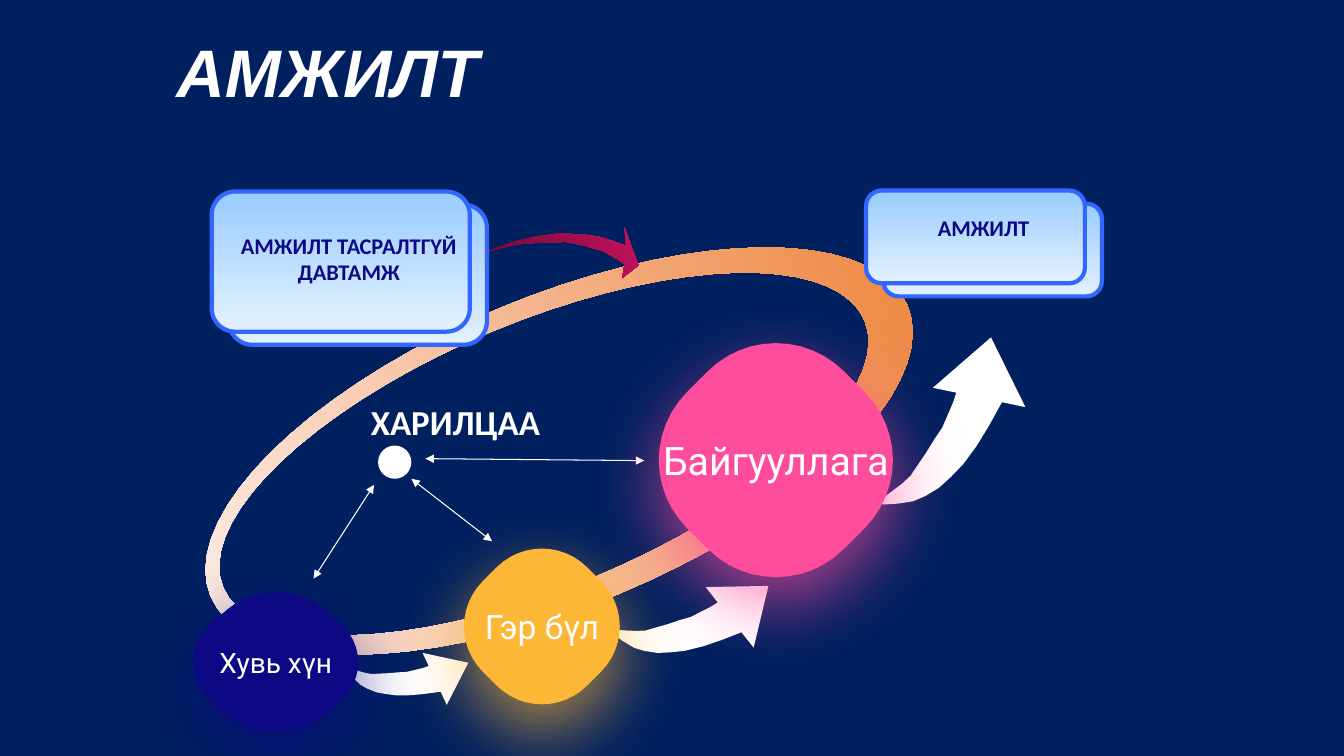
from math import cos, pi, sin

from lxml.etree import SubElement
from pptx import Presentation
from pptx.dml.color import RGBColor
from pptx.enum.shapes import MSO_CONNECTOR, MSO_SHAPE
from pptx.enum.text import MSO_ANCHOR, MSO_AUTO_SIZE, PP_ALIGN
from pptx.oxml.ns import qn
from pptx.util import Inches, Pt

# Grid: cells of one inch
COLS, ROWS = 13.33, 7.5
CELL = Inches(1)

NAVY = RGBColor(0x00, 0x20, 0x60)
WHITE = RGBColor(0xFF, 0xFF, 0xFF)
INK = RGBColor(0x0D, 0x08, 0x84)
AMBER = RGBColor(0xFC, 0xB7, 0x36)
PINK = RGBColor(0xFF, 0x4D, 0x9E)
CREAM = RGBColor(0xFD, 0xF6, 0xF5)
ORANGE = RGBColor(0xED, 0x7D, 0x31)
RUBY = RGBColor(0xD1, 0x13, 0x64)
WINE = RGBColor(0x61, 0x09, 0x2E)
SKY = RGBColor(0x99, 0xCC, 0xFF)
ICE = RGBColor(0xE3, 0xF1, 0xFF)
BLUE = RGBColor(0x33, 0x66, 0xFF)

# Outlines as shares of their own box
SWOOSH = [
    (0, 0), (0, .11), (.02, .21), (.05, .32), (.09, .4), (.15, .49), (.22, .56),
    (.3, .63), (.41, .7), (.53, .76), (.67, .82), (.67, 1), (1, .64), (.67, .29),
    (.67, .47), (.61, .46), (.54, .44), (.47, .42), (.4, .38), (.32, .34),
    (.25, .3), (.18, .26), (.13, .21), (.08, .15), (.04, .1), (.01, .05)]
HOOK = [
    (0, 1), (.03, .8), (.09, .63), (.17, .48), (.3, .32), (.43, .2), (.55, .12),
    (.67, .05), (.46, 0), (.95, .03), (1, .18), (.86, .12), (.75, .16),
    (.61, .22), (.46, .32), (.31, .44), (.17, .63), (.07, .79)]


def cells(*spans):
    return [round(span * CELL) for span in spans]


def oval(mid, half, steps=72):
    """Points round an ellipse, as shares of a box."""
    turns = [2 * pi * step / steps for step in range(steps)]
    return [(mid[0] + half[0] * cos(t), mid[1] + half[1] * sin(t)) for t in turns]


def blob(steps=12):
    """A rounded diamond: one curved corner, turned four times."""
    knots = [(.77, .85), (.62, 1), (.38, 1), (.23, .85)]
    side = []
    for step in range(steps + 1):
        t = step / steps
        parts = [(1 - t) ** 3, 3 * t * (1 - t) ** 2, 3 * t * t * (1 - t), t ** 3]
        side.append(tuple(sum(p * k[axis] for p, k in zip(parts, knots))
                          for axis in (0, 1)))
    points = []
    for _ in range(4):
        points += side
        side = [(1 - y, x) for x, y in side]
    return points


def paint(shape, fill, angle=0):
    """Fill with one colour, or with a pair as a gradient."""
    shape.shadow.inherit = False
    shape.line.fill.background()
    if isinstance(fill, RGBColor):
        shape.fill.solid()
        shape.fill.fore_color.rgb = fill
        return
    shape.fill.gradient()
    shape.fill.gradient_angle = angle
    for stop, color in zip(shape.fill.gradient_stops, fill):
        stop.color.rgb = color


def trace(slide, rings, box, fill, turn=0, angle=0):
    """Draw closed outlines within a box, then rotate it."""
    left, top, width, height = box
    paths = [[cells(left + x * width, top + y * height) for x, y in ring]
             for ring in rings]
    pen = slide.shapes.build_freeform(*paths[0][0])
    pen.add_line_segments(paths[0][1:], close=True)
    for path in paths[1:]:
        pen.move_to(*path[0])
        pen.add_line_segments(path[1:], close=True)
    shape = pen.convert_to_shape()
    shape.rotation = turn
    paint(shape, fill, angle)
    return shape


def write(frame, text, size, face, color, align=PP_ALIGN.LEFT, bold=False):
    frame.text = text
    para = frame.paragraphs[0]
    para.alignment = align
    font = para.font
    font.size, font.name, font.bold = Pt(size), face, bold
    font.color.rgb = color


def glow(shape, color):
    """Soft coloured shadow below a shape."""
    effects = shape._element.spPr.find(qn("a:effectLst"))
    shade = SubElement(effects, qn("a:outerShdw"), blurRad=str(Pt(53)),
                       dist=str(Pt(19)), dir="5400000", algn="t", rotWithShape="0")
    tone = SubElement(shade, qn("a:srgbClr"), val=str(color))
    SubElement(tone, qn("a:alpha"), val="67000")


def ball(slide, text, size, box, color):
    shape = trace(slide, [blob()], box, color)
    glow(shape, color)
    frame = shape.text_frame
    frame.word_wrap = False
    frame.margin_left = frame.margin_right = 0
    frame.vertical_anchor = MSO_ANCHOR.MIDDLE
    write(frame, text, size, "Roboto", WHITE, PP_ALIGN.CENTER)


def label(shapes, text, size, box, color, align, wrap):
    frame = shapes.add_textbox(*cells(*box)).text_frame
    frame.word_wrap = wrap
    frame.auto_size = MSO_AUTO_SIZE.SHAPE_TO_FIT_TEXT
    write(frame, text, size, "Calibri", color, align, True)


def card(slide, text, box, drop, tall):
    """Two stacked plates with a caption on the front one."""
    left, top, width, height = box
    group = slide.shapes.add_group_shape().shapes
    for right, down in ((.17, .13), (0, 0)):
        plate = group.add_shape(MSO_SHAPE.ROUNDED_RECTANGLE,
                                *cells(left + right, top + down, width, height))
        paint(plate, (SKY, ICE), 270)
        plate.line.color.rgb = BLUE
        plate.line.width = Pt(3)
    label(group, text, 16, (left + .08, top + drop, width, tall), INK,
          PP_ALIGN.CENTER, True)


def link(slide, *ends):
    """Thin line with an arrowhead at both ends."""
    line = slide.shapes.add_connector(MSO_CONNECTOR.STRAIGHT, *cells(*ends))
    line.line.color.rgb = WHITE
    line.line.width = Pt(.75)
    for end in ("headEnd", "tailEnd"):
        SubElement(line.line._get_or_add_ln(), qn("a:" + end), type="triangle")
    SubElement(line._element.spPr, qn("a:effectLst"))


def head(slide):
    title = slide.shapes.title
    title.left, title.top, title.width, title.height = cells(1.65, .44, 4.2, .62)
    frame = title.text_frame
    frame.vertical_anchor = MSO_ANCHOR.MIDDLE
    write(frame, "АМЖИЛТ", 48, "Arial", WHITE, bold=True)
    frame.paragraphs[0].font.italic = True
    frame.paragraphs[0].line_spacing = .9


def main():
    deck = Presentation()
    deck.slide_width, deck.slide_height = cells(COLS, ROWS)
    slide = deck.slides.add_slide(deck.slide_layouts[5])
    slide.background.fill.solid()
    slide.background.fill.fore_color.rgb = NAVY
    head(slide)

    # Hub and orbit
    hub = slide.shapes.add_shape(MSO_SHAPE.OVAL, *cells(3.75, 4.42, .33, .33))
    paint(hub, WHITE)
    orbit = [oval((.5, .5), (.5, .5)), oval((.48, .49), (.46, .43))[::-1]]
    trace(slide, orbit, (1.8, 2.94, 7.49, 3.07), (CREAM, ORANGE), 337.4)

    # Growth arrows
    for box, turn in (((8.54, 3.55, 1.84, 1.32), 281.8),
                      ((3.53, 6.31, 1.12, .8), 335.1),
                      ((6.19, 5.62, 1.5, 1.08), 321.6)):
        trace(slide, [SWOOSH], box, WHITE, turn)

    # Cards and the arrow between them
    card(slide, "АМЖИЛТ", (8.59, 1.89, 2.17, .92), .19, .37)
    trace(slide, [HOOK], (5.2, 1.91, .82, 1.33), (RUBY, WINE), 64.1, 270)
    card(slide, "АМЖИЛТ ТАСРАЛТГҮЙ ДАВТАМЖ", (2.1, 1.9, 2.56, 1.39), .35, .64)

    # Links from the hub
    label(slide.shapes, "ХАРИЛЦАА", 25, (3.58, 3.92, 1.9, .52), WHITE,
          PP_ALIGN.LEFT, False)
    link(slide, 4.22, 4.55, 6.39, 4.57)
    link(slide, 4.08, 4.75, 4.88, 5.37)
    link(slide, 3.11, 5.74, 3.71, 4.81)

    # Levels
    ball(slide, "Гэр бүл", 24, (4.54, 5.38, 1.67, 1.67), AMBER)
    ball(slide, "Хувь хүн", 20, (1.85, 5.82, 1.77, 1.5), INK)
    ball(slide, "Байгууллага", 28, (6.44, 3.31, 2.51, 2.51), PINK)

    deck.save("out.pptx")


if __name__ == "__main__":
    main()
